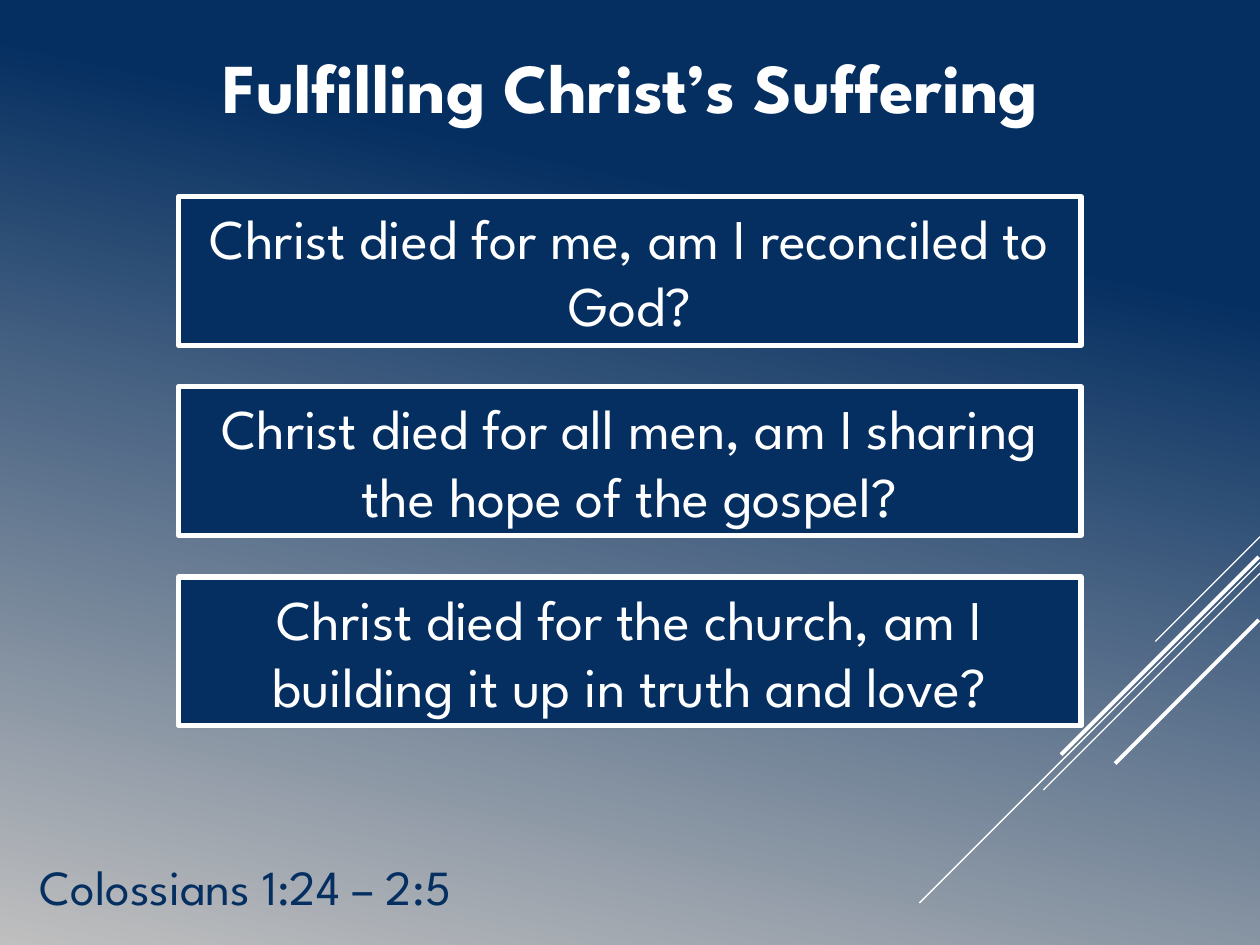
from pptx import Presentation
from pptx.dml.color import RGBColor
from pptx.enum.shapes import MSO_CONNECTOR as MC, MSO_SHAPE as MS
from pptx.enum.text import MSO_ANCHOR as MA, MSO_AUTO_SIZE as AS, PP_ALIGN as PA
from pptx.util import Pt
from lxml.etree import SubElement
from pptx.oxml.ns import qn

COLORS = {"navy": "052F61", "white": "FFFFFF", "grey": "BFBFBF"}


def rgb(name):
    return RGBColor.from_string(COLORS[name])


class Deck:
    font = "League Spartan"

    def __init__(self, prs):
        self.s = prs.slides.add_slide(prs.slide_layouts[6])

    def background(self, stops, angle):
        fill = self.s.background.fill
        fill.gradient()
        fill.gradient_angle = angle
        for stop, (position, color) in zip(fill.gradient_stops, stops):
            stop.position = position
            stop.color.rgb = rgb(color)

    def line(self, x1, y1, x2, y2, width):
        c = self.s.shapes.add_connector(MC.STRAIGHT, Pt(x1), Pt(y1), Pt(x2), Pt(y2))
        c.line.color.rgb = rgb("white")
        c.line.width = Pt(width)
        SubElement(c._element.spPr, qn("a:effectLst"))

    def set_text(self, sp, text, size, color, align, anchor, bold=False):
        tf = sp.text_frame
        frame = {"word_wrap": True, "auto_size": AS.SHAPE_TO_FIT_TEXT,
                 "vertical_anchor": anchor}
        for key, value in frame.items():
            setattr(tf, key, value)
        p = tf.paragraphs[0]
        p.alignment = align
        r = p.add_run()
        r.text = text
        for key, value in {"name": self.font, "size": Pt(size), "bold": bold}.items():
            setattr(r.font, key, value)
        r.font.color.rgb = rgb(color)

    def text(self, x, y, w, h, text, size, color, align, bold=False):
        sp = self.s.shapes.add_textbox(Pt(x), Pt(y), Pt(w), Pt(h))
        self.set_text(sp, text, size, color, align, MA.TOP, bold)

    def box(self, x, y, w, h, text):
        sp = self.s.shapes.add_shape(MS.RECTANGLE, Pt(x), Pt(y), Pt(w), Pt(h))
        sp.shadow.inherit = False
        sp.fill.solid()
        sp.fill.fore_color.rgb = rgb("navy")
        sp.line.color.rgb = rgb("white")
        sp.line.width = Pt(3)
        self.set_text(sp, text, 32, "white", PA.CENTER, MA.MIDDLE)


def main():
    prs = Presentation()
    prs.slide_width, prs.slide_height = Pt(720), Pt(540)
    deck = Deck(prs)
    deck.background([(0.25, "navy"), (1, "grey")], 258)

    diagonals = [(720, 306.7, 59.8, 0.75), (720, 321.4, 194.6, 0.75),
                 (720, 327.6, 123.8, 0.75), (719.3, 318.2, 113, 2.25),
                 (719.3, 354.2, 82.1, 2.25)]
    for x, y, run, width in diagonals:
        deck.line(x, y, x - run, y + run, width)

    deck.text(110.2, 21.6, 500.4, 55.4, "Fulfilling Christ’s Suffering",
              40, "white", PA.CENTER, True)
    questions = ["Christ died for me, am I reconciled to God?",
                 "Christ died for all men, am I sharing the hope of the gospel?",
                 "Christ died for the church, am I building it up in truth and love?"]
    for i, question in enumerate(questions):
        deck.box(102.2, 112.3 + i * 108.7, 515.5, 85, question)
    deck.text(15.8, 486, 333.4, 41, "Colossians 1:24 – 2:5", 28, "navy", PA.LEFT)
    prs.save("out.pptx")


if __name__ == "__main__":
    main()
